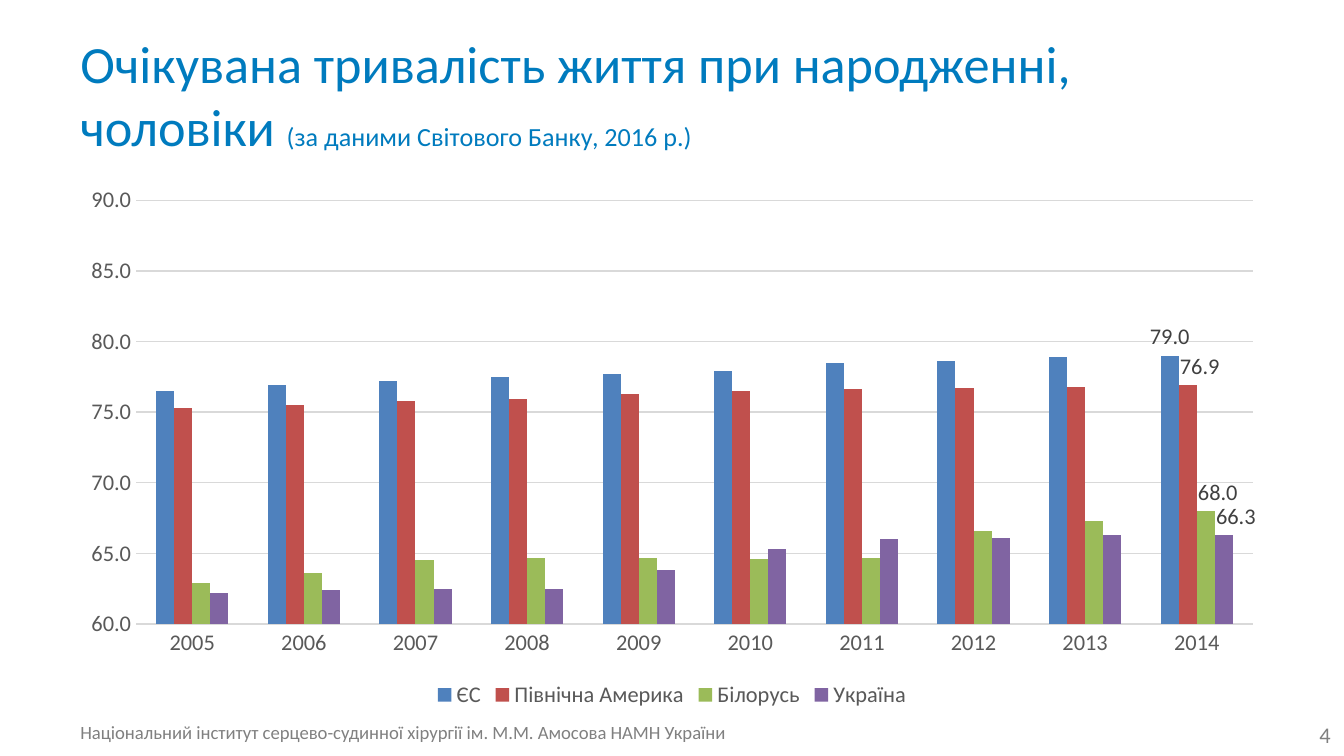
from dataclasses import dataclass
from lxml.etree import SubElement
from pptx import Presentation
from pptx.chart.data import CategoryChartData
from pptx.dml.color import RGBColor
from pptx.enum.chart import (XL_CHART_TYPE, XL_LABEL_POSITION,
                             XL_LEGEND_POSITION, XL_TICK_MARK)
from pptx.enum.text import MSO_ANCHOR, PP_ALIGN
from pptx.oxml.ns import qn
from pptx.util import Cm, Pt


@dataclass(frozen=True)
class Theme:
    face: str = "Calibri"
    title: str = "007BBE"
    muted: str = "808080"
    axis: str = "595959"
    label: str = "404040"
    grid: str = "D9D9D9"
    head: int = 28
    sub: int = 14
    body: int = 12
    foot: int = 10


THEME = Theme()
YEARS = [str(year) for year in range(2005, 2015)]
SERIES = [
    ("ЄС", "4F81BD", 0,
     (76.5, 76.9, 77.2, 77.5, 77.7, 77.9, 78.5, 78.6, 78.9, 79.0)),
    ("Північна Америка", "C0504D", 0.01,
     (75.3, 75.5, 75.8, 75.9, 76.3, 76.5, 76.6, 76.7, 76.8, 76.9)),
    ("Білорусь", "9BBB59", 0.01,
     (62.9, 63.6, 64.5, 64.7, 64.7, 64.6, 64.7, 66.6, 67.3, 68.0)),
    ("Україна", "8064A2", 0.01,
     (62.2, 62.4, 62.5, 62.5, 63.8, 65.3, 66.0, 66.1, 66.3, 66.3)),
]


def style(font, size, color):
    font.name = THEME.face
    font.size = Pt(size)
    font.bold = False
    font.color.rgb = RGBColor.from_string(color)


def rule(line):
    line.color.rgb = RGBColor.from_string(THEME.grid)
    line.width = Pt(0.75)


def add_text(slide, box, parts, color, anchor=MSO_ANCHOR.TOP,
             align=PP_ALIGN.LEFT):
    frame = slide.shapes.add_textbox(*map(Cm, box)).text_frame
    frame.word_wrap = True
    frame.vertical_anchor = anchor
    para = frame.paragraphs[0]
    para.alignment = align
    for text, size in parts:
        run = para.add_run()
        run.text = text
        style(run.font, size, color)


def add_title(slide, box):
    parts = [("Очікувана тривалість життя при народженні, чоловіки ", THEME.head),
             ("(за даними Світового Банку, 2016 р.)", THEME.sub)]
    add_text(slide, box, parts, THEME.title, MSO_ANCHOR.MIDDLE)


def add_footer(slide, box):
    left, top, width, height = box
    split = 18.21
    name = "Національний інститут серцево-судинної хірургії ім. М.М. Амосова НАМН України"
    add_text(slide, (left, top, split - left, height),
             [(name, THEME.foot)], THEME.muted)
    add_text(slide, (split, top, left + width - split, height),
             [("4", THEME.body)], THEME.muted, MSO_ANCHOR.MIDDLE, PP_ALIGN.RIGHT)


def shift_label(series, shift):
    label = series._element.find(".//" + qn("c:dLbl"))
    layout = SubElement(label, qn("c:layout"))
    manual = SubElement(layout, qn("c:manualLayout"))
    for axis, value in (("x", shift), ("y", 0)):
        SubElement(manual, qn("c:" + axis)).set("val", str(value))
    label.insert(1, layout)


def add_bars(slide, box):
    data = CategoryChartData(number_format="0.0")
    data.categories = YEARS
    for name, _, _, values in SERIES:
        data.add_series(name, values)
    chart = slide.shapes.add_chart(
        XL_CHART_TYPE.COLUMN_CLUSTERED, *map(Cm, box), data).chart
    style(chart.font, THEME.body, THEME.axis)
    chart.has_title = False
    chart.has_legend = True
    chart.legend.position = XL_LEGEND_POSITION.BOTTOM
    chart.legend.include_in_layout = False
    style(chart.legend.font, THEME.body, THEME.axis)

    years, ages = chart.category_axis, chart.value_axis
    for axis in (years, ages):
        axis.major_tick_mark = axis.minor_tick_mark = XL_TICK_MARK.NONE
        style(axis.tick_labels.font, THEME.body, THEME.axis)
    rule(years.format.line)
    ages.format.line.fill.background()
    rule(ages.major_gridlines.format.line)
    ages.minimum_scale, ages.maximum_scale, ages.major_unit = 60, 90, 5
    ages.tick_labels.number_format = "0.0"
    ages.tick_labels.number_format_is_linked = False

    plot = chart.plots[0]
    plot.vary_by_categories = False
    plot.gap_width, plot.overlap = 219, 0
    for series, (_, color, shift, values) in zip(plot.series, SERIES):
        series.format.fill.solid()
        series.format.fill.fore_color.rgb = RGBColor.from_string(color)
        series.invert_if_negative = False
        label = series.points[len(values) - 1].data_label
        style(label.font, THEME.body, THEME.label)
        label.position = XL_LABEL_POSITION.OUTSIDE_END
        if shift:
            shift_label(series, shift)


def main():
    deck = Presentation()
    deck.slide_width, deck.slide_height = Cm(25.4), Cm(14.29)
    slide = deck.slides.add_slide(deck.slide_layouts[6])
    add_footer(slide, (1.27, 13.51, 24.13, 0.76))
    add_title(slide, (1.27, 0.58, 20.96, 2.39))
    add_bars(slide, (1.27, 3.33, 22.86, 10.16))
    deck.save("out.pptx")


if __name__ == "__main__":
    main()
